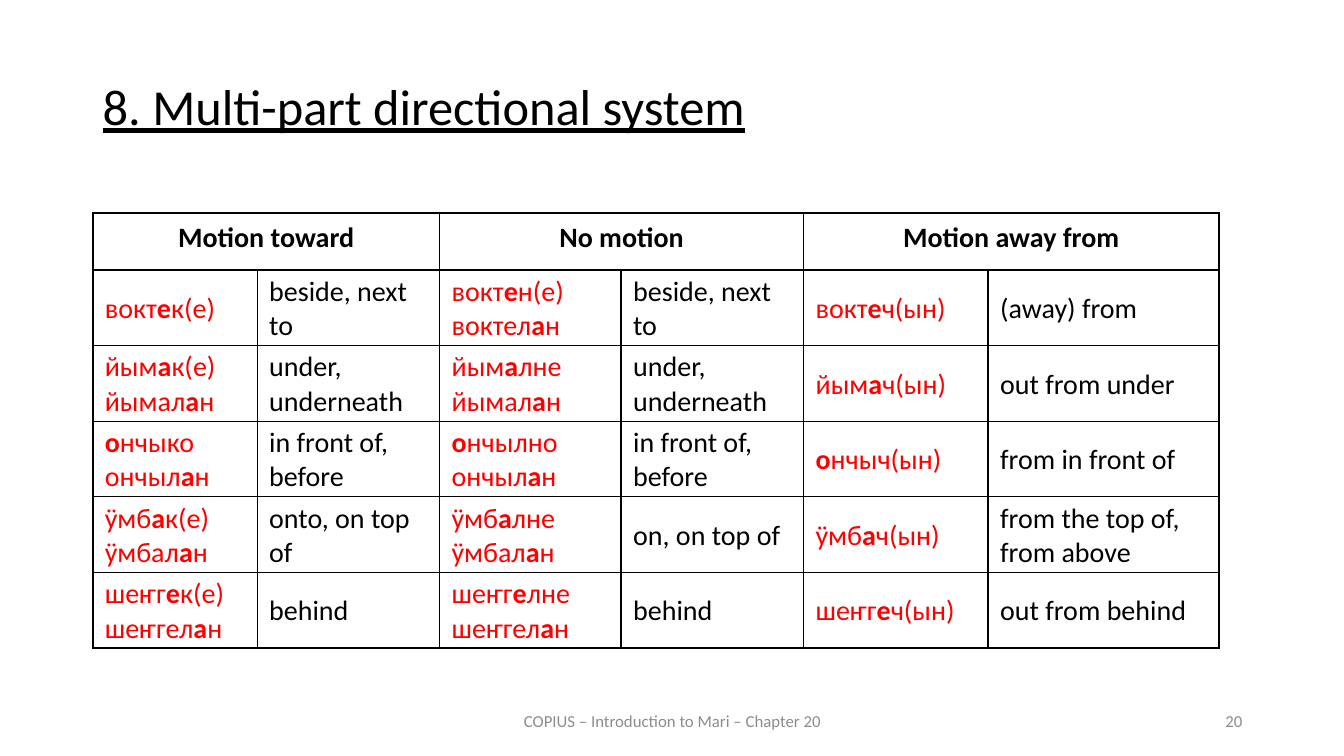
"""Build the slide on the Mari multi-part directional system."""
from lxml.etree import SubElement
from pptx import Presentation
from pptx.dml.color import RGBColor
from pptx.enum.text import MSO_ANCHOR, PP_ALIGN
from pptx.oxml.ns import qn
from pptx.util import Inches, Pt

BLACK = RGBColor(0x00, 0x00, 0x00)
RED = RGBColor(0xFF, 0x00, 0x00)
GRAY = RGBColor(0x8C, 0x8C, 0x8C)
THICK, THIN = Pt(1.5), Pt(1)

COLUMN_WIDTHS = [1.63, 1.81, 1.8, 1.81, 1.83, 2.29]
ROW_HEIGHTS = [0.57] + [0.75] * 5
HEADINGS = ["Motion toward", "No motion", "Motion away from"]
POSTPOSITIONS = [
    ["вокт*е*к(е)", "beside, next to", "вокт*е*н(е)\nвоктел*а*н", "beside, next to",
     "вокт*е*ч(ын)", "(away) from"],
    ["йым*а*к(е)\nйымал*а*н", "under, underneath", "йым*а*лне\nйымал*а*н", "under, underneath",
     "йым*а*ч(ын)", "out from under"],
    ["*о*нчыко\nончыл*а*н", "in front of, before", "*о*нчылно\nончыл*а*н", "in front of, before",
     "*о*нчыч(ын)", "from in front of"],
    ["ӱмб*а*к(е)\nӱмбал*а*н", "onto, on top of", "ӱмб*а*лне\nӱмбал*а*н", "on, on top of",
     "ӱмб*а*ч(ын)", "from the top of, from above"],
    ["шеҥг*е*к(е)\nшеҥгел*а*н", "behind", "шеҥг*е*лне\nшеҥгел*а*н", "behind",
     "шеҥг*е*ч(ын)", "out from behind"],
]


def write_text(text_frame, text, size, color, alignment=PP_ALIGN.LEFT):
    """Fill a text frame; asterisks enclose bold letters."""
    text_frame.word_wrap = True
    text_frame.text = text.replace("*", "")
    for paragraph, line in zip(text_frame.paragraphs, text.split("\n")):
        paragraph.alignment = alignment
        paragraph.clear()
        for index, part in enumerate(line.split("*")):
            if part:
                run = paragraph.add_run()
                run.text = part
                run.font.name = "Calibri"
                run.font.size = Pt(size)
                run.font.bold = index % 2 == 1
                run.font.color.rgb = color


def set_borders(cell, left, right, top, bottom):
    """Draw black cell borders of the given widths."""
    properties = cell._tc.get_or_add_tcPr()
    for tag, width in (("a:lnL", left), ("a:lnR", right), ("a:lnT", top), ("a:lnB", bottom)):
        line = SubElement(properties, qn(tag), w=str(width))
        fill = SubElement(line, qn("a:solidFill"))
        SubElement(fill, qn("a:srgbClr"), val=str(BLACK))


presentation = Presentation()
presentation.slide_width = Inches(13.33)
presentation.slide_height = Inches(7.5)
slide = presentation.slides.add_slide(presentation.slide_layouts[6])

title = slide.shapes.add_textbox(Inches(0.92), Inches(0.76), Inches(11.5), Inches(0.83))
write_text(title.text_frame, "8. Multi-part directional system", 36, BLACK, PP_ALIGN.JUSTIFY)
title_paragraph = title.text_frame.paragraphs[0]
title_paragraph.line_spacing = 0.9
title_paragraph.space_before = Pt(12)
title_paragraph.runs[0].font.underline = True

for left, width, text, alignment in (
    (4.42, 4.5, "COPIUS – Introduction to Mari – Chapter 20", PP_ALIGN.CENTER),
    (9.42, 3, "20", PP_ALIGN.RIGHT),
):
    footer = slide.shapes.add_textbox(Inches(left), Inches(6.95), Inches(width), Inches(0.4))
    footer.text_frame.vertical_anchor = MSO_ANCHOR.MIDDLE
    write_text(footer.text_frame, text, 12, GRAY, alignment)

table = slide.shapes.add_table(
    len(ROW_HEIGHTS), len(COLUMN_WIDTHS), Inches(0.92), Inches(2.11),
    Inches(sum(COLUMN_WIDTHS)), Inches(sum(ROW_HEIGHTS))).table
table.first_row = False
table.horz_banding = False
for column, width in zip(table.columns, COLUMN_WIDTHS):
    column.width = Inches(width)
for row, height in zip(table.rows, ROW_HEIGHTS):
    row.height = Inches(height)

last_row = len(ROW_HEIGHTS) - 1
for row_index in range(len(ROW_HEIGHTS)):
    for column_index in range(len(COLUMN_WIDTHS)):
        cell = table.cell(row_index, column_index)
        is_header = row_index == 0
        is_mari = column_index % 2 == 0
        set_borders(
            cell,
            left=THICK if is_header or is_mari else THIN,
            right=THIN if is_mari and not is_header else THICK,
            top=THICK if row_index <= 1 else THIN,
            bottom=THICK if row_index in (0, last_row) else THIN)
        cell.fill.background()
        if is_header:
            cell.margin_left = cell.margin_right = Inches(0.17)
            cell.margin_top = cell.margin_bottom = Inches(0.08)
            if is_mari:
                cell.merge(table.cell(0, column_index + 1))
                heading = f"*{HEADINGS[column_index // 2]}*"
                write_text(cell.text_frame, heading, 20, BLACK, PP_ALIGN.CENTER)
        else:
            cell.vertical_anchor = MSO_ANCHOR.MIDDLE
            cell.margin_left = cell.margin_right = Inches(0.12)
            cell.margin_top, cell.margin_bottom = Inches(0.02), Inches(0)
            text = POSTPOSITIONS[row_index - 1][column_index]
            write_text(cell.text_frame, text, 20, RED if is_mari else BLACK)

presentation.save("out.pptx")
